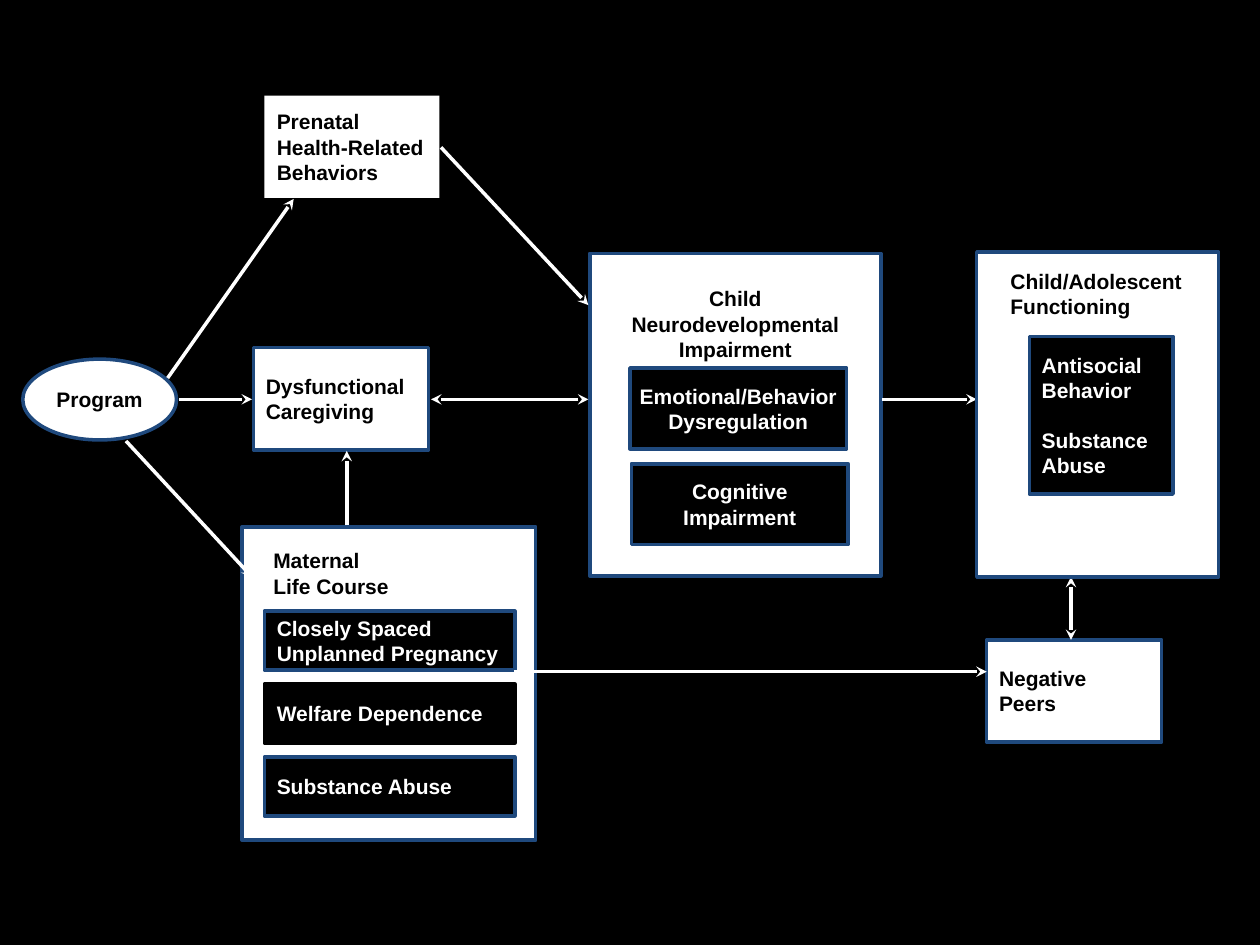
from lxml.etree import SubElement
from pptx import Presentation
from pptx.dml.color import RGBColor
from pptx.enum.shapes import MSO_CONNECTOR, MSO_SHAPE
from pptx.enum.text import MSO_ANCHOR, PP_ALIGN
from pptx.oxml.ns import qn
from pptx.util import Cm, Pt

WHITE, BLACK, BLUE = "FFFFFF", "000000", "1F497D"
LEFT, MID = PP_ALIGN.LEFT, PP_ALIGN.CENTER
RECT, OVAL = MSO_SHAPE.RECTANGLE, MSO_SHAPE.OVAL
FONT = {"name": "Arial", "size": Pt(12), "bold": True}

PALE = {"fill": WHITE, "edge": BLUE, "ink": BLACK}
DARK = {"fill": BLACK, "edge": BLUE, "ink": WHITE}
BARE = {"fill": WHITE, "edge": None, "ink": BLACK}
FLAT = {"fill": BLACK, "edge": BLACK, "ink": WHITE}
NOTE = {"fill": None, "edge": None, "ink": BLACK, "anchor": MSO_ANCHOR.TOP}

CAUSE = (3.53, 2.06)
CHILD = (4.37, 1.63)
RISKS = [
    (["Closely Spaced", "Unplanned Pregnancy"], DARK),
    (["Welfare Dependence"], FLAT),
    (["Substance Abuse"], DARK),
]
BACK = [
    (11.89, 5.11, 5.87, 6.5, [], PALE, {}),
    (12.07, 5.64, 5.51, 1.78, ["Child Neurodevelopmental", "Impairment"],
     NOTE, {"align": MID, "wrap": True}),
    (12.7, 7.42, *CHILD, ["Emotional/Behavior", "Dysregulation"], DARK, {"align": MID}),
    (12.73, 9.35, *CHILD, ["Cognitive", "Impairment"], DARK, {"align": MID}),
    (0.46, 7.24, 3.1, 1.63, ["Program"], PALE, {"align": MID, "kind": OVAL}),
    (5.33, 1.93, *CAUSE, ["Prenatal", "Health-Related", "Behaviors"], BARE, {}),
    (5.11, 7.01, *CAUSE, ["Dysfunctional", "Caregiving"], PALE, {}),
    (4.88, 10.62, 5.92, 6.32, [], PALE, {}),
    (5.26, 10.92, 2.84, 1.27, ["Maternal", "Life Course"], NOTE, {}),
    *[(5.33, 12.32 + 1.47 * i, 5.05, 1.19, text, look, {})
      for i, (text, look) in enumerate(RISKS)],
    (19.89, 12.9, *CAUSE, ["Negative", "Peers"], PALE, {}),
]
FRONT = [
    (19.69, 5.08, 4.88, 6.55, [], PALE, {}),
    (20.75, 6.78, 2.9, 3.18, ["Antisocial", "Behavior", "Substance", "Abuse"],
     DARK, {"gaps": {"Substance": 14}}),
    (20.12, 5.28, 3.96, 1.27, ["Child/Adolescent", "Functioning"], NOTE, {}),
]
ONE, BOTH = ["tailEnd"], ["headEnd", "tailEnd"]
ARROWS = [
    (3.61, 8.05, 5.08, 8.05, ONE),
    (2.54, 8.89, 5.08, 11.63, ONE),
    (3.38, 7.62, 5.92, 4.01, ONE),
    (8.89, 2.97, 11.86, 6.15, ONE),
    (17.78, 8.05, 19.69, 8.05, ONE),
    (21.59, 11.63, 21.59, 12.9, BOTH),
    (6.99, 10.59, 6.99, 9.09, ONE),
    (10.36, 13.54, 19.89, 13.54, ONE),
    (11.86, 8.05, 8.69, 8.05, BOTH),
]


def paint(fill, tint):
    if tint:
        fill.solid()
        fill.fore_color.rgb = RGBColor.from_string(tint)
    else:
        fill.background()


def write(frame, text, look, align=LEFT, wrap=False, gaps={}):
    frame.word_wrap = wrap
    frame.vertical_anchor = look.get("anchor", MSO_ANCHOR.MIDDLE)
    for i, words in enumerate(text):
        para = frame.paragraphs[0] if i == 0 else frame.add_paragraph()
        para.alignment = align
        if words in gaps:
            para.space_before = Pt(gaps[words])
        run = para.add_run()
        run.text = words
        for key, value in FONT.items():
            setattr(run.font, key, value)
        run.font.color.rgb = RGBColor.from_string(look["ink"])


def draw_box(slide, x, y, wide, high, text, look, more):
    style = dict(more)
    kind = style.pop("kind", RECT)
    box = slide.shapes.add_shape(kind, Cm(x), Cm(y), Cm(wide), Cm(high))
    box.shadow.inherit = False
    paint(box.fill, look["fill"])
    paint(box.line.fill, look["edge"])
    if look["edge"]:
        box.line.width = Pt(2)
    if text:
        write(box.text_frame, text, look, **style)


def draw_arrow(slide, x, y, to_x, to_y, ends):
    arrow = slide.shapes.add_connector(
        MSO_CONNECTOR.STRAIGHT, Cm(x), Cm(y), Cm(to_x), Cm(to_y))
    paint(arrow.line.fill, WHITE)
    arrow.line.width = Pt(2)
    props = arrow._element.spPr
    for end in ends:
        SubElement(props.find(qn("a:ln")), qn("a:" + end), type="stealth")
    SubElement(props, qn("a:effectLst"))


def main():
    deck = Presentation()
    deck.slide_width, deck.slide_height = Cm(25.4), Cm(19.05)
    slide = deck.slides.add_slide(deck.slide_layouts[6])
    paint(slide.background.fill, BLACK)
    for box in BACK:
        draw_box(slide, *box)
    for arrow in ARROWS:
        draw_arrow(slide, *arrow)
    for box in FRONT:
        draw_box(slide, *box)
    deck.save("out.pptx")


if __name__ == "__main__":
    main()
